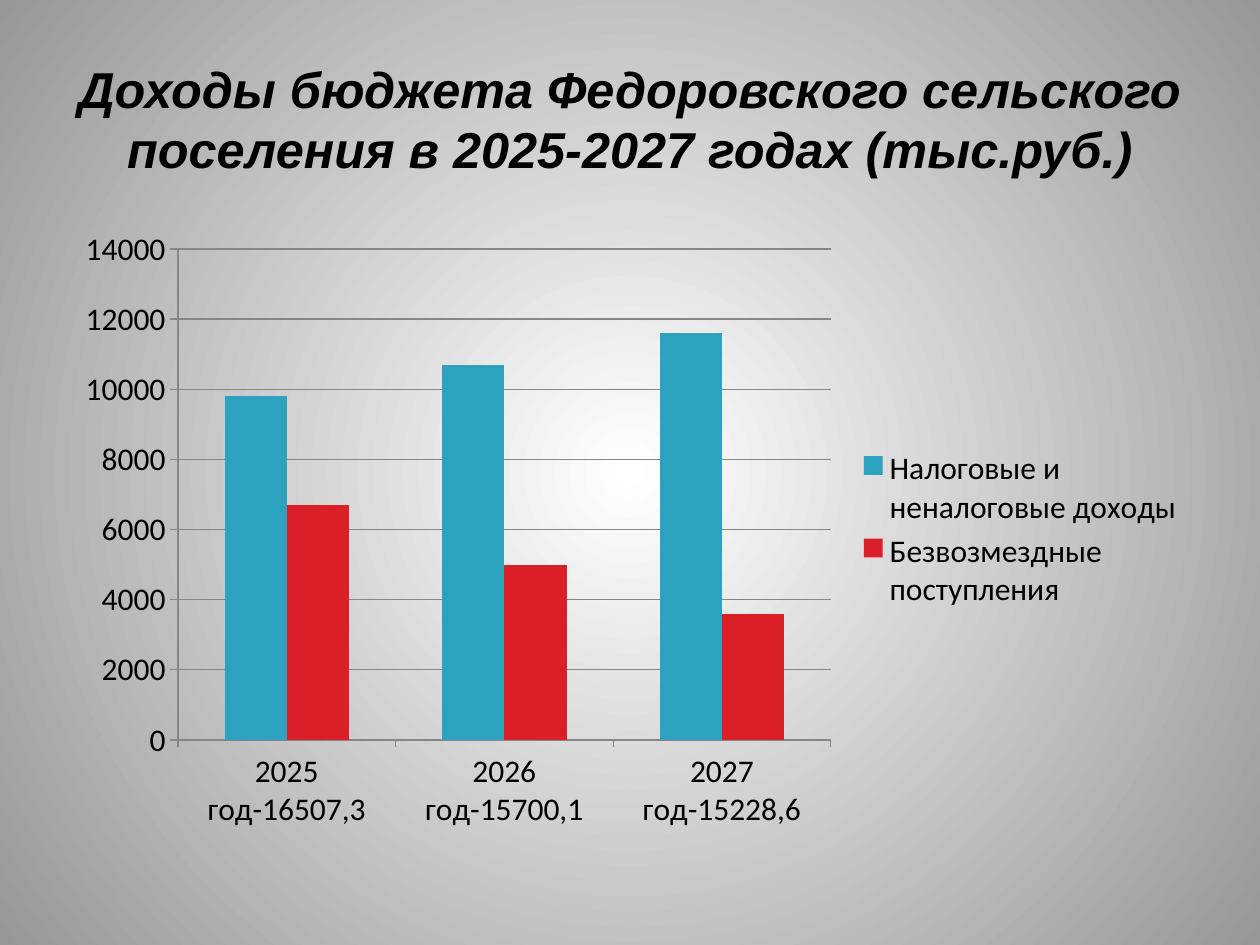
from pptx import Presentation
from pptx.chart.data import CategoryChartData
from pptx.dml.color import RGBColor
from pptx.enum.chart import XL_CHART_TYPE, XL_LEGEND_POSITION, XL_TICK_MARK
from pptx.enum.text import MSO_ANCHOR, PP_ALIGN
from pptx.oxml import parse_xml
from pptx.oxml.ns import nsdecls
from pptx.util import Inches, Pt

CLUSTERED = XL_CHART_TYPE.COLUMN_CLUSTERED
RIGHT = XL_LEGEND_POSITION.RIGHT
OUTSIDE = XL_TICK_MARK.OUTSIDE
MIDDLE = MSO_ANCHOR.MIDDLE
CENTER = PP_ALIGN.CENTER

WIDTH, HEIGHT = Inches(10), Inches(7.5)
COLORS = {
    "text": "000000",
    "glow": "FFFFFF",
    "edge": "979797",
    "axis": "868686",
    "tax": "2DA2BF",
    "grants": "DA1F28",
}
YEARS = ["2025 год-16507,3", "2026 год-15700,1", "2027 год-15228,6"]
INCOME = [
    ("Налоговые и неналоговые доходы", "tax", (9800, 10700, 11600)),
    ("Безвозмездные поступления", "grants", (6700, 5000, 3600)),
]


def color(name):
    """Return the named palette colour."""
    return RGBColor.from_string(COLORS[name])


def share_box(left, top, width, height):
    """Turn shares of the slide's size into a box of lengths."""
    return (round(left * WIDTH), round(top * HEIGHT),
            round(width * WIDTH), round(height * HEIGHT))


def paint_background(page):
    """Fill the page with a round glow that darkens towards the edges."""
    fill = page.background.fill
    fill.gradient()
    for stop, name, position in zip(fill.gradient_stops, ("glow", "edge"), (0, 1)):
        stop.color.rgb = color(name)
        stop.position = position
    linear = page.element.xpath(".//p:bg//a:lin")[0]
    circle = parse_xml(
        f'<a:path {nsdecls("a")} path="circle">'
        '<a:fillToRect l="50000" t="50000" r="50000" b="50000"/></a:path>')
    linear.getparent().replace(linear, circle)


def add_title(page, box, text):
    """Place the centred slide title in the box."""
    frame = page.shapes.add_textbox(*box).text_frame
    frame.word_wrap = True
    frame.vertical_anchor = MIDDLE
    para = frame.paragraphs[0]
    para.text = text
    para.alignment = CENTER
    font = para.font
    font.name, font.size = "Arial", Pt(28.8)
    font.bold = font.italic = True
    font.color.rgb = color("text")


def add_income_chart(page, box):
    """Place the clustered columns of budget income in the box."""
    table = CategoryChartData()
    table.categories = YEARS
    for name, _, values in INCOME:
        table.add_series(name, values)
    chart = page.shapes.add_chart(CLUSTERED, *box, table).chart
    chart.has_title = False
    chart.font.name, chart.font.size = "Calibri", Pt(18)
    chart.font.color.rgb = color("text")

    plot = chart.plots[0]
    plot.gap_width = 150
    plot.vary_by_categories = False
    for series, (_, name, _) in zip(plot.series, INCOME):
        series.format.fill.solid()
        series.format.fill.fore_color.rgb = color(name)

    amounts = chart.value_axis
    amounts.has_major_gridlines = True
    amounts.tick_labels.number_format = "General"
    amounts.tick_labels.number_format_is_linked = False
    for axis in (chart.category_axis, amounts):
        axis.major_tick_mark = OUTSIDE
    for part in (chart.category_axis, amounts, amounts.major_gridlines):
        part.format.line.color.rgb = color("axis")
        part.format.line.width = Pt(0.75)

    chart.has_legend = True
    chart.legend.position = RIGHT
    chart.legend.include_in_layout = False


def main():
    """Build and save the budget income slide."""
    deck = Presentation()
    deck.slide_width, deck.slide_height = WIDTH, HEIGHT
    page = deck.slides.add_slide(deck.slide_layouts[6])
    paint_background(page)
    add_title(page, share_box(0.05, 0.04, 0.9, 0.17),
              "Доходы бюджета Федоровского сельского поселения "
              "в 2025-2027 годах (тыс.руб.)")
    add_income_chart(page, share_box(0.05, 0.23, 0.9, 0.66))
    deck.save("out.pptx")


if __name__ == "__main__":
    main()
